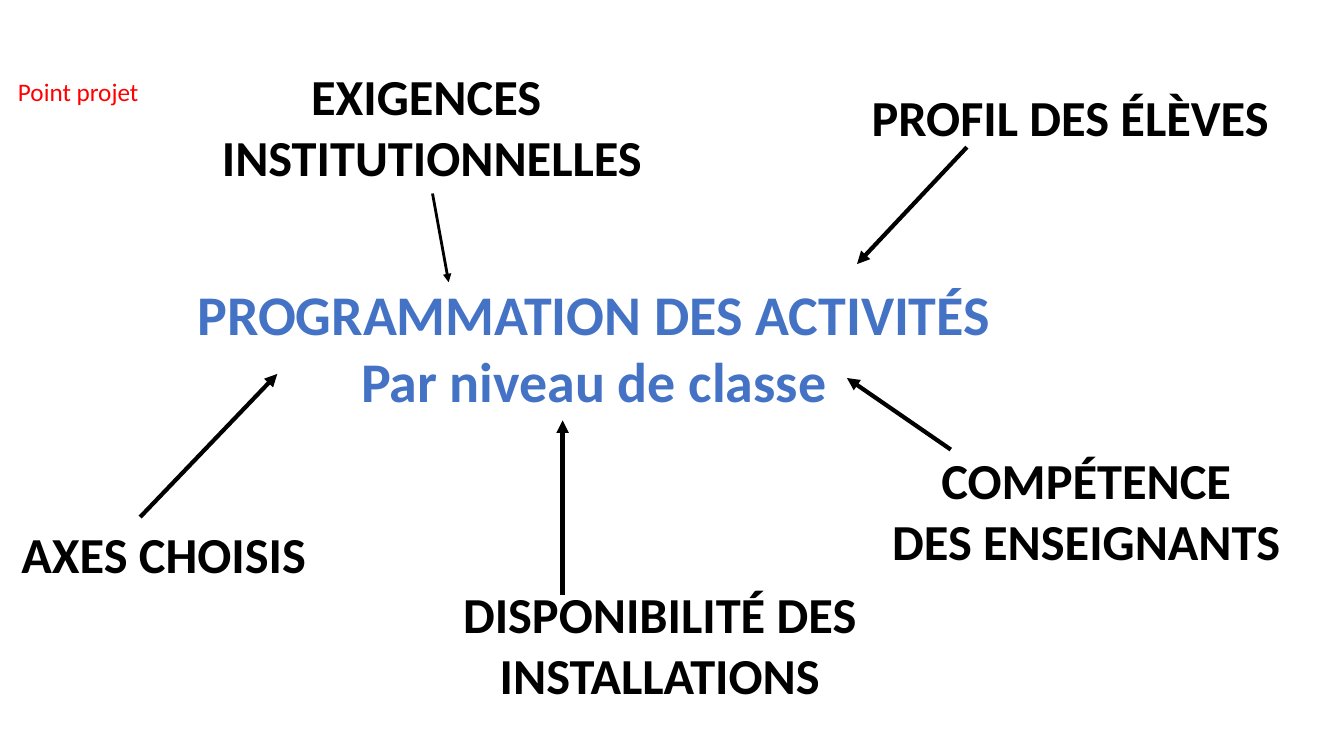
import pptx
import pptx.util
import pptx.dml.color
import pptx.enum.shapes
import pptx.enum.text
import lxml.etree

Inches = pptx.util.Inches
Pt = pptx.util.Pt
ALIGN = pptx.enum.text.PP_ALIGN

THEME = {
    "font": "Calibri",
    "line": "000000",
    "title": {"size": 40, "color": "4472C4", "bold": True, "align": ALIGN.CENTER},
    "factor": {"size": 36, "color": "000000", "bold": True, "align": ALIGN.CENTER},
    "note": {"size": 18, "color": "FF0000", "bold": False, "align": ALIGN.LEFT},
}

LABELS = [
    ("title", "PROGRAMMATION DES ACTIVITÉS\nPar niveau de classe", (1.39, 2.72, 9, 1.45)),
    ("factor", "PROFIL DES ÉLÈVES", (8.5, 0.8, 4.23, 1.01)),
    ("factor", "EXIGENCES \nINSTITUTIONNELLES", (2.07, 0.6, 4.43, 1.62)),
    ("factor", "AXES CHOISIS", (0.08, 5.14, 3.09, 1.01)),
    ("factor", "COMPÉTENCE\nDES ENSEIGNANTS", (8.66, 4.41, 4.23, 1.62)),
    ("factor", "DISPONIBILITÉ DES\nINSTALLATIONS", (4.43, 5.74, 4.23, 1.62)),
    ("note", "Point projet", (0.08, 0.71, 1.99, 0.4)),
]

ARROWS = [
    ((9.59, 1.46), (8.5, 2.62), 3),
    ((9.43, 4.46), (8.4, 3.75), 3),
    ((1.39, 5.13), (2.75, 3.71), 3),
    ((4.29, 1.92), (4.45, 2.8), 2),
    ((5.58, 5.9), (5.58, 4.17), 3),
]


def color(code):
    return pptx.dml.color.RGBColor.from_string(code)


def add_label(slide, role, text, place):
    style = THEME[role]
    frame = slide.shapes.add_textbox(*map(Inches, place)).text_frame
    frame.word_wrap = True
    frame.text = text
    for line in frame.paragraphs:
        line.alignment = style["align"]
        for run in line.runs:
            run.font.name = THEME["font"]
            run.font.size = Pt(style["size"])
            run.font.bold = style["bold"]
            run.font.color.rgb = color(style["color"])


def add_arrow(slide, start, end, width):
    kind = pptx.enum.shapes.MSO_CONNECTOR.STRAIGHT
    arrow = slide.shapes.add_connector(kind, *map(Inches, start + end))
    arrow.line.color.rgb = color(THEME["line"])
    arrow.line.width = Pt(width)
    props = arrow._element.spPr
    space = "{http://schemas.openxmlformats.org/drawingml/2006/main}"
    lxml.etree.SubElement(props.find(space + "ln"), space + "tailEnd", type="triangle")
    lxml.etree.SubElement(props, space + "effectLst")


def main():
    deck = pptx.Presentation()
    deck.slide_width = Inches(13.33)
    deck.slide_height = Inches(7.5)
    slide = deck.slides.add_slide(deck.slide_layouts[6])
    for label in LABELS:
        add_label(slide, *label)
    for arrow in ARROWS:
        add_arrow(slide, *arrow)
    deck.save("out.pptx")


if __name__ == "__main__":
    main()
